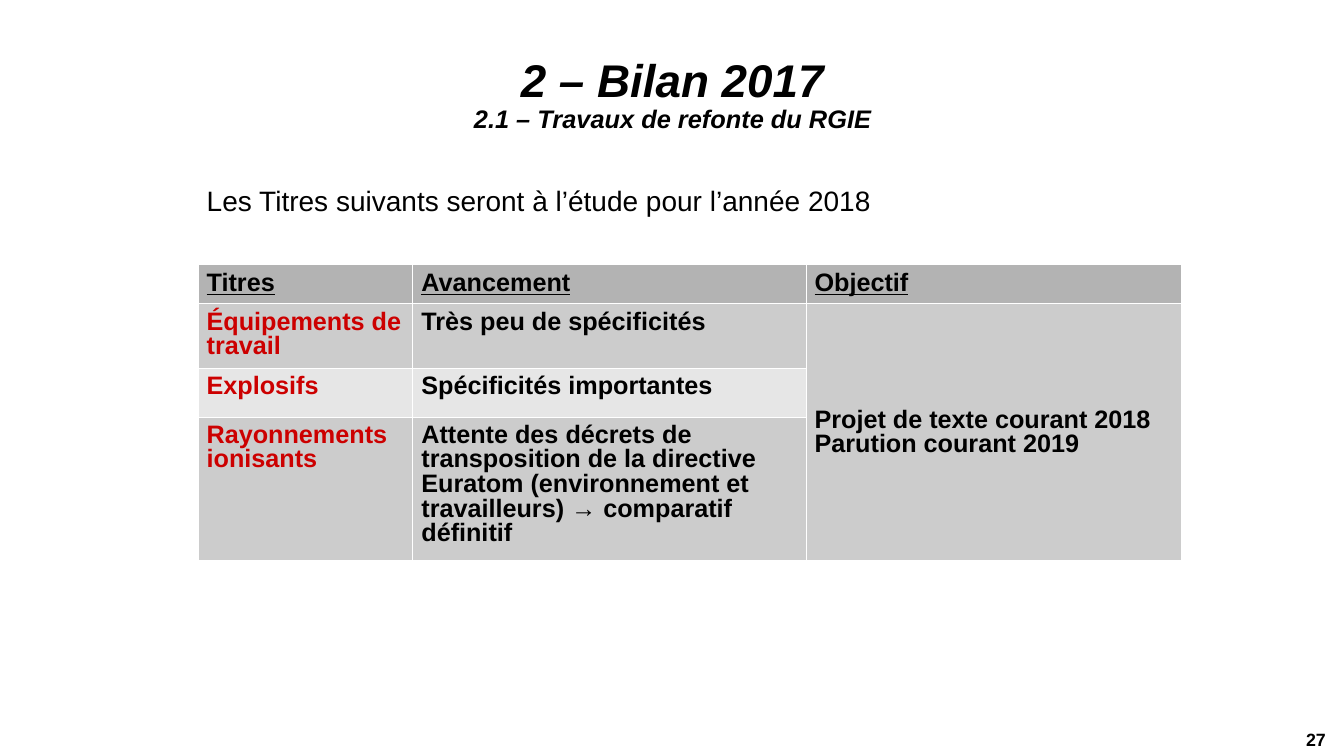
from copy import deepcopy
from dataclasses import dataclass

from lxml.etree import SubElement
from pptx import Presentation
from pptx.dml.color import RGBColor
from pptx.enum.text import MSO_ANCHOR, MSO_AUTO_SIZE, PP_ALIGN
from pptx.oxml.ns import qn
from pptx.util import Inches, Pt

BLACK = RGBColor(0x00, 0x00, 0x00)
RED = RGBColor(0xCC, 0x00, 0x00)
HEADER_GREY = RGBColor(0xB3, 0xB3, 0xB3)
DARK_BAND = RGBColor(0xCC, 0xCC, 0xCC)
LIGHT_BAND = RGBColor(0xE6, 0xE6, 0xE6)
BORDER_WHITE = "FFFFFF"
FONT = "Arial"

COLUMN_WIDTHS = (2.13, 3.9, 3.72)
ROW_HEIGHTS = (0.36, 0.6, 0.48, 1.34)


@dataclass(frozen=True)
class TextStyle:
    size: float
    color: RGBColor = BLACK
    bold: bool = False
    italic: bool = False
    underline: bool = False


@dataclass(frozen=True)
class TitreRow:
    titre: str
    avancement: str
    fill: RGBColor


HEADINGS = ("Titres", "Avancement", "Objectif")
TITRES = (
    TitreRow("Équipements de travail", "Très peu de spécificités", DARK_BAND),
    TitreRow("Explosifs", "Spécificités importantes", LIGHT_BAND),
    TitreRow(
        "Rayonnements ionisants",
        "Attente des décrets de transposition de la directive Euratom "
        "(environnement et travailleurs) → comparatif définitif",
        DARK_BAND,
    ),
)
OBJECTIFS = ("Projet de texte courant 2018", "Parution courant 2019")

HEADING_STYLE = TextStyle(18, bold=True, underline=True)
TITRE_STYLE = TextStyle(18, RED, bold=True)
CELL_STYLE = TextStyle(18, bold=True)


def add_run(paragraph, text: str, style: TextStyle):
    run = paragraph.add_run()
    run.text = text
    font = run.font
    font.name, font.size = FONT, Pt(style.size)
    font.bold, font.italic = style.bold, style.italic
    font.underline = style.underline
    font.color.rgb = style.color
    return run


def set_margins(target, left: float, top: float, right: float, bottom: float) -> None:
    target.margin_left, target.margin_top = Inches(left), Inches(top)
    target.margin_right, target.margin_bottom = Inches(right), Inches(bottom)


def set_borders(cell) -> None:
    properties = cell._tc.get_or_add_tcPr()
    for position, side in enumerate(("lnL", "lnR", "lnT", "lnB")):
        line = SubElement(properties, qn(f"a:{side}"), w=str(Pt(0.06)))
        fill = SubElement(line, qn("a:solidFill"))
        SubElement(fill, qn("a:srgbClr"), val=BORDER_WHITE)
        properties.insert(position, line)


def fill_cell(cell, lines: tuple[str, ...], style: TextStyle, top: float = 0.07) -> None:
    set_margins(cell, 0.09, top, 0.09, 0.05)
    for index, text in enumerate(lines):
        frame = cell.text_frame
        paragraph = frame.add_paragraph() if index else frame.paragraphs[0]
        paragraph.line_spacing = 0.87
        add_run(paragraph, text, style)


def add_text(slide, box: tuple[float, ...], margins: tuple[float, ...], text: str,
             style: TextStyle, align: PP_ALIGN, spacing: float) -> None:
    frame = slide.shapes.add_textbox(*map(Inches, box)).text_frame
    frame.word_wrap = True
    set_margins(frame, *margins)
    paragraph = frame.paragraphs[0]
    paragraph.alignment, paragraph.line_spacing = align, spacing
    add_run(paragraph, text, style)


def add_title(slide) -> None:
    title = slide.shapes.title
    title.left, title.top = Inches(2.17), Inches(0.3)
    title.width, title.height = Inches(9), Inches(1.25)
    frame = title.text_frame
    frame.word_wrap, frame.auto_size = True, MSO_AUTO_SIZE.NONE
    frame.vertical_anchor = MSO_ANCHOR.MIDDLE
    set_margins(frame, 0, 0.06, 0, 0)
    paragraph = frame.paragraphs[0]
    paragraph.alignment, paragraph.line_spacing = PP_ALIGN.CENTER, 0.87
    heading = add_run(paragraph, "2 – Bilan 2017", TextStyle(32.7, bold=True, italic=True))
    # The line break takes the size of the heading before it
    paragraph.add_line_break()
    paragraph._p[-1].append(deepcopy(heading._r.rPr))
    add_run(paragraph, "2.1 – Travaux de refonte du RGIE",
            TextStyle(18.1, bold=True, italic=True))


def add_titres_table(slide) -> None:
    table = slide.shapes.add_table(
        len(ROW_HEIGHTS), len(COLUMN_WIDTHS), Inches(1.96), Inches(2.62),
        Inches(sum(COLUMN_WIDTHS)), Inches(sum(ROW_HEIGHTS))).table
    for column, width in zip(table.columns, COLUMN_WIDTHS):
        column.width = Inches(width)
    for row, height in zip(table.rows, ROW_HEIGHTS):
        row.height = Inches(height)

    # Fills and borders
    row_fills = (HEADER_GREY, *(titre.fill for titre in TITRES))
    for row, color in zip(table.rows, row_fills):
        for cell in row.cells:
            cell.fill.solid()
            cell.fill.fore_color.rgb = color
            set_borders(cell)

    # Headings, then one row per titre
    for column, heading in enumerate(HEADINGS):
        fill_cell(table.cell(0, column), (heading,), HEADING_STYLE, top=0.08)
    for row, titre in enumerate(TITRES, start=1):
        fill_cell(table.cell(row, 0), (titre.titre,), TITRE_STYLE)
        fill_cell(table.cell(row, 1), (titre.avancement,), CELL_STYLE)

    # Shared objective
    objectif = table.cell(1, 2)
    objectif.merge(table.cell(len(TITRES), 2))
    objectif.vertical_anchor = MSO_ANCHOR.MIDDLE
    fill_cell(objectif, OBJECTIFS, CELL_STYLE)


def main() -> None:
    presentation = Presentation()
    presentation.slide_width, presentation.slide_height = Inches(13.33), Inches(7.5)
    slide = presentation.slides.add_slide(presentation.slide_layouts[5])

    # Page number
    add_text(slide, (11.92, 7.23, 1.23, 0.25), (0, 0, 0, 0), "27",
             TextStyle(12.7, bold=True), PP_ALIGN.RIGHT, 1.0)
    add_title(slide)
    add_titres_table(slide)
    # Introduction
    add_text(slide, (1.96, 1.81, 8.39, 0.45), (0.09, 0.04, 0.09, 0.04),
             "Les Titres suivants seront à l’étude pour l’année 2018",
             TextStyle(20), PP_ALIGN.LEFT, 0.93)
    presentation.save("out.pptx")


if __name__ == "__main__":
    main()
